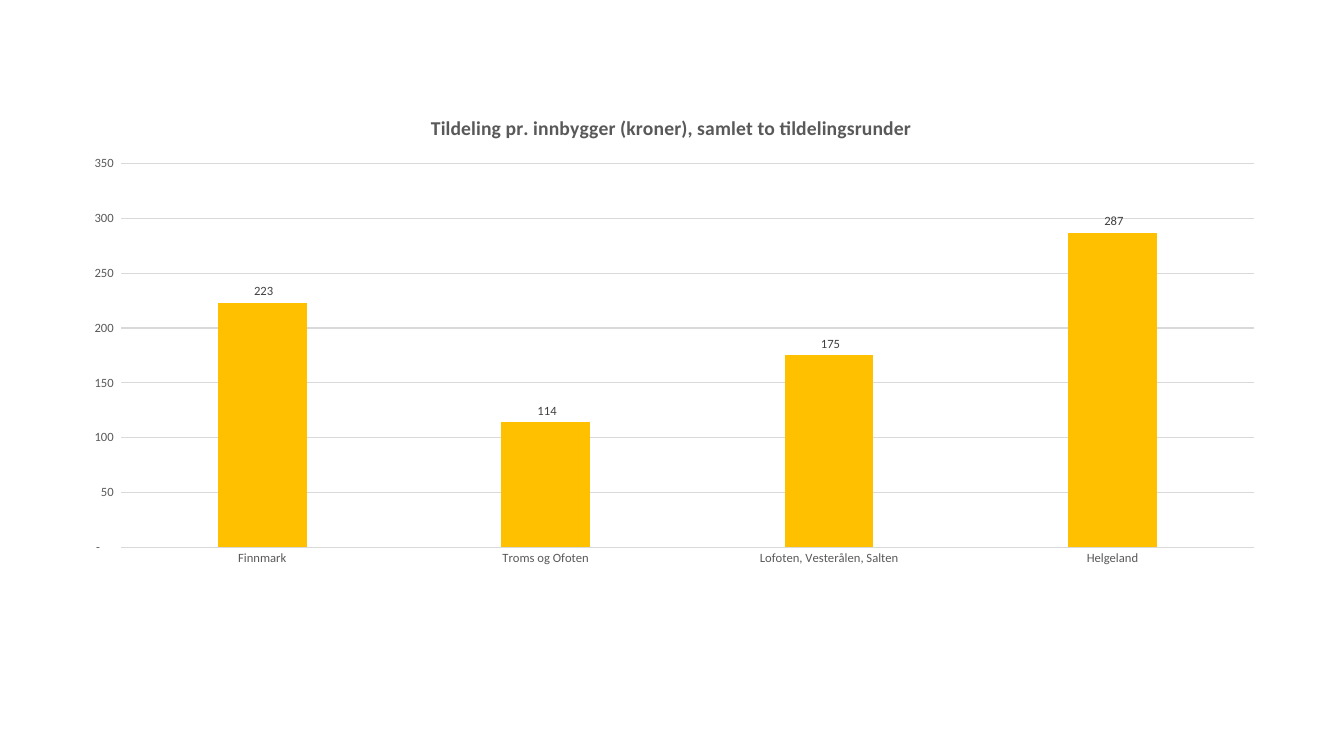
from pptx import Presentation
from pptx.chart.data import CategoryChartData
from pptx.dml.color import RGBColor
from pptx.enum.chart import XL_CHART_TYPE, XL_LABEL_POSITION, XL_TICK_MARK
from pptx.util import Inches, Pt

COLUMN = XL_CHART_TYPE.COLUMN_CLUSTERED
OUTSIDE = XL_LABEL_POSITION.OUTSIDE_END
NO_TICK = XL_TICK_MARK.NONE

BLACK = RGBColor(0x00, 0x00, 0x00)
DARK = RGBColor(0x40, 0x40, 0x40)
GRAY = RGBColor(0x59, 0x59, 0x59)
LIGHT = RGBColor(0xD9, 0xD9, 0xD9)
GOLD = RGBColor(0xFF, 0xC0, 0x00)

FONT = "Calibri"
FORMAT = r'_-* #\ ##0_-;\-* #\ ##0_-;_-* "-"??_-;_-@_-'
TITLE = "Tildeling pr. innbygger (kroner), samlet to tildelingsrunder"
GRANTS = {
    "Finnmark": 223,
    "Troms og Ofoten": 114,
    "Lofoten, Vesterålen, Salten": 175,
    "Helgeland": 287,
}


def set_font(font, size, color, bold=False):
    font.name = FONT
    font.size = Pt(size)
    font.bold = bold
    font.color.rgb = color


def set_line(line):
    line.color.rgb = LIGHT
    line.width = Pt(0.75)


def set_number(part):
    part.number_format = FORMAT
    part.number_format_is_linked = False


def add_title(chart):
    chart.has_title = True
    frame = chart.chart_title.text_frame
    frame.text = TITLE
    set_font(frame.paragraphs[0].font, 14, GRAY, bold=True)
    chart.chart_title.include_in_layout = False


def style_axes(chart):
    for axis in (chart.category_axis, chart.value_axis):
        axis.major_tick_mark = axis.minor_tick_mark = NO_TICK
        set_font(axis.tick_labels.font, 9, GRAY)
    set_line(chart.category_axis.format.line)

    values = chart.value_axis
    values.minimum_scale, values.maximum_scale = 0, 350
    values.major_unit = 50
    values.format.line.fill.background()
    values.has_major_gridlines = True
    set_line(values.major_gridlines.format.line)
    set_number(values.tick_labels)


def style_bars(chart):
    plot = chart.plots[0]
    plot.vary_by_categories = False
    plot.gap_width = 219
    plot.overlap = -27
    bars = plot.series[0]
    bars.format.fill.solid()
    bars.format.fill.fore_color.rgb = GOLD

    labels = bars.data_labels
    labels.show_value = True
    labels.position = OUTSIDE
    set_number(labels)
    set_font(labels.font, 9, DARK)


def add_columns(slide):
    data = CategoryChartData()
    data.categories = list(GRANTS)
    data.add_series("Series 1", list(GRANTS.values()))
    chart = slide.shapes.add_chart(
        COLUMN, Inches(0.64), Inches(0.95), Inches(12.04), Inches(4.76), data
    ).chart
    set_font(chart.font, 10, BLACK)
    chart.has_legend = False
    add_title(chart)
    style_axes(chart)
    style_bars(chart)


def main():
    deck = Presentation()
    deck.slide_width, deck.slide_height = Inches(13.33), Inches(7.5)
    slide = deck.slides.add_slide(deck.slide_layouts[6])

    # Grants per inhabitant by region
    add_columns(slide)
    deck.save("out.pptx")


if __name__ == "__main__":
    main()
